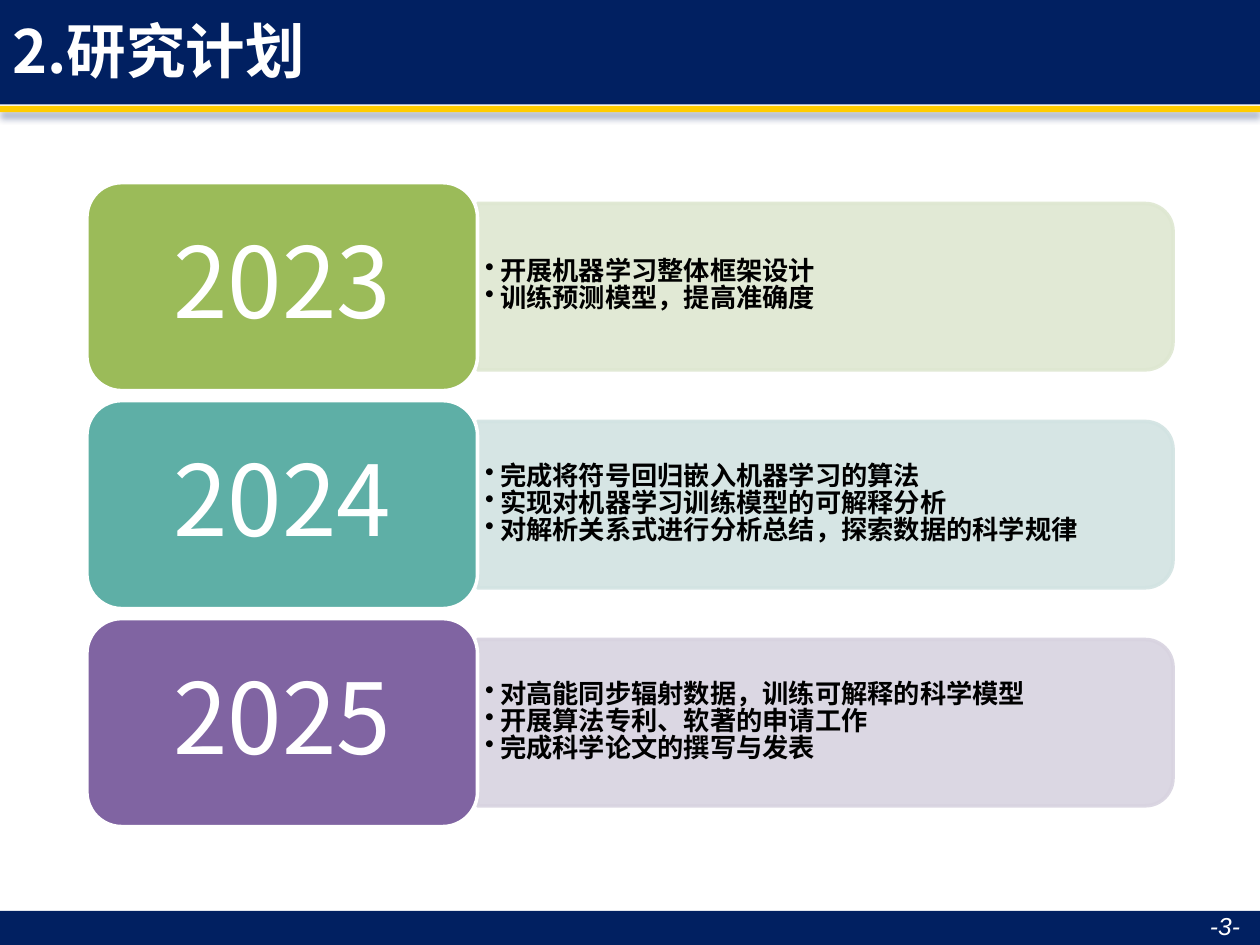
from dataclasses import dataclass

from lxml.etree import SubElement
from pptx import Presentation
from pptx.dml.color import RGBColor
from pptx.enum.shapes import MSO_SHAPE
from pptx.enum.text import MSO_ANCHOR, PP_ALIGN
from pptx.oxml.ns import qn
from pptx.util import Inches, Pt

CJK = "Noto Sans CJK SC"
NAVY, GOLD, WHITE, BLACK = "012061", "FFCC00", "FFFFFF", "000000"
FIRST_TOP, ROW_PITCH = 1.45, 1.73
YEAR_LEFT, YEAR_WIDTH, YEAR_HEIGHT = 0.69, 3.1, 1.65
PANEL_LENGTH, PANEL_HEIGHT = 5.52, 1.32


@dataclass
class YearPlan:
    year: str
    color: str
    tint: str
    tasks: list[str]


PLANS = [
    YearPlan("2023", "9BBB59", "DEE7D1",
             ["开展机器学习整体框架设计", "训练预测模型，提高准确度"]),
    YearPlan("2024", "5EAFA6", "D2E3E2",
             ["完成将符号回归嵌入机器学习的算法",
              "实现对机器学习训练模型的可解释分析",
              "对解析关系式进行分析总结，探索数据的科学规律"]),
    YearPlan("2025", "8064A2", "D8D3E0",
             ["对高能同步辐射数据，训练可解释的科学模型",
              "开展算法专利、软著的申请工作",
              "完成科学论文的撰写与发表"]),
]


def rgb(color: str) -> RGBColor:
    return RGBColor.from_string(color)


def set_alpha(fill_parent, percent: int) -> None:
    for color in fill_parent.iter(qn("a:srgbClr")):
        SubElement(color, qn("a:alpha"), val=str(percent * 1000))


def add_block(slide, kind, box: tuple, fill: str, line: str | None = None):
    block = slide.shapes.add_shape(kind, *map(Inches, box))
    block.shadow.inherit = False
    block.fill.solid()
    block.fill.fore_color.rgb = rgb(fill)
    if line:
        block.line.color.rgb = rgb(line)
        block.line.width = Pt(2)
    else:
        block.line.fill.background()
    return block


def set_frame(frame, margins: tuple) -> None:
    values = dict(zip(("margin_left", "margin_top", "margin_right", "margin_bottom"),
                      map(Inches, margins)))
    values |= {"word_wrap": True, "vertical_anchor": MSO_ANCHOR.MIDDLE}
    for name, value in values.items():
        setattr(frame, name, value)


def write(paragraph, text: str, align, color: str, **font_values) -> None:
    paragraph.alignment = align
    run = paragraph.add_run()
    run.text = text
    run.font.color.rgb = rgb(color)
    for name, value in font_values.items():
        setattr(run.font, name, value)
    SubElement(run.font._element, qn("a:ea"), typeface=CJK)


def add_bullet(paragraph) -> None:
    properties = paragraph._p.get_or_add_pPr()
    properties.set("marL", str(Inches(0.12)))
    properties.set("indent", str(Inches(-0.12)))
    SubElement(properties, qn("a:buChar"), char="•")


def add_plan(slide, plan: YearPlan, top: float) -> None:
    middle = top + YEAR_HEIGHT / 2
    panel_left = YEAR_LEFT + YEAR_WIDTH

    # Tinted panel, turned so that its rounded end points right
    panel = add_block(slide, MSO_SHAPE.ROUND_2_SAME_RECTANGLE,
                      (panel_left + (PANEL_LENGTH - PANEL_HEIGHT) / 2 , middle - PANEL_LENGTH / 2,
                       PANEL_HEIGHT, PANEL_LENGTH), plan.tint, plan.tint)
    panel.rotation = 90
    set_alpha(panel._element.spPr, 90)

    # Task list
    tasks = slide.shapes.add_textbox(
        *map(Inches, (panel_left, middle - 0.6, 5.45, 1.19))).text_frame
    set_frame(tasks, (0.06, 0.03, 0.06, 0.03))
    for index, task in enumerate(plan.tasks):
        paragraph = tasks.add_paragraph() if index else tasks.paragraphs[0]
        paragraph.line_spacing = 0.86
        add_bullet(paragraph)
        write(paragraph, task, PP_ALIGN.LEFT, BLACK, size=Pt(15), name=CJK, bold=True)

    # Year
    year = add_block(slide, MSO_SHAPE.ROUNDED_RECTANGLE,
                     (YEAR_LEFT, top, YEAR_WIDTH, YEAR_HEIGHT), plan.color, WHITE).text_frame
    set_frame(year, (0.31, 0.2, 0.31, 0.2))
    year.paragraphs[0].line_spacing = 0.9
    write(year.paragraphs[0], plan.year, PP_ALIGN.CENTER, WHITE, size=Pt(56), name=CJK)


def add_rule_shadow(rule) -> None:
    effects = rule._element.spPr.find(qn("a:effectLst"))
    shadow = SubElement(effects, qn("a:outerShdw"), blurRad=str(Pt(4)), dist=str(Pt(3)),
                        dir="5400000", algn="t", rotWithShape="0")
    SubElement(shadow, qn("a:srgbClr"), val=NAVY)
    set_alpha(shadow, 40)


def main() -> None:
    deck = Presentation()
    deck.slide_width, deck.slide_height = Inches(10), Inches(7.5)
    slide = deck.slides.add_slide(deck.slide_layouts[5])

    # Header and footer bands
    add_block(slide, MSO_SHAPE.RECTANGLE, (0, 0, 10, 0.83), NAVY)
    add_block(slide, MSO_SHAPE.RECTANGLE, (0, 7.23, 10, 0.27), NAVY)
    add_rule_shadow(add_block(slide, MSO_SHAPE.RECTANGLE, (0, 0.84, 10, 0.05), GOLD))

    # Page number
    page = slide.shapes.add_textbox(*map(Inches, (7.61, 7.19, 2.33, 0.31))).text_frame
    set_frame(page, (0.1, 0.05, 0.1, 0.05))
    write(page.paragraphs[0], "-3-", PP_ALIGN.RIGHT, WHITE,
          size=Pt(14), name="Arial", italic=True)

    # Title, brought in front of the header band
    title = slide.shapes.title
    title.left, title.top, title.width, title.height = map(Inches, (0, -0.02, 10, 0.83))
    slide.shapes._spTree.append(title._element)
    set_frame(title.text_frame, (0.1, 0.05, 0.1, 0.05))
    write(title.text_frame.paragraphs[0], "2.研究计划", PP_ALIGN.LEFT, WHITE,
          size=Pt(34), name=CJK, bold=True)

    # One row per year
    for row, plan in enumerate(PLANS):
        add_plan(slide, plan, FIRST_TOP + row * ROW_PITCH)

    deck.save("out.pptx")


if __name__ == "__main__":
    main()
